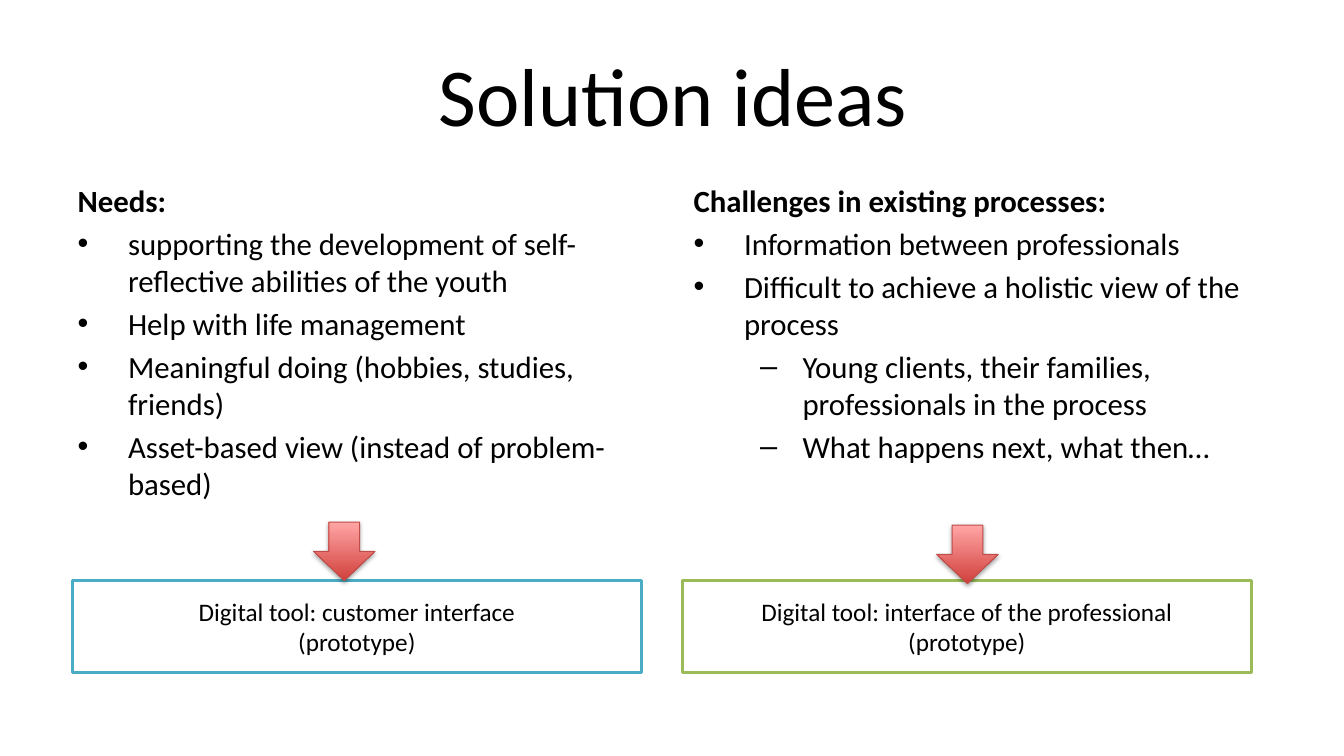
from dataclasses import dataclass

from lxml import etree
from pptx import Presentation
from pptx.dml.color import RGBColor
from pptx.enum.shapes import MSO_SHAPE
from pptx.enum.text import MSO_ANCHOR, MSO_AUTO_SIZE, PP_ALIGN
from pptx.oxml.ns import qn
from pptx.util import Inches, Pt

RECTANGLE, DOWN_ARROW = MSO_SHAPE.RECTANGLE, MSO_SHAPE.DOWN_ARROW
MIDDLE, TOP = MSO_ANCHOR.MIDDLE, MSO_ANCHOR.TOP
CENTER = PP_ALIGN.CENTER
NO_AUTOFIT = MSO_AUTO_SIZE.NONE
TWO_CONTENT_LAYOUT = 3


@dataclass(frozen=True)
class Theme:
    font: str = "Calibri"
    title_size: float = 58.7
    body_size: float = 22
    tool_size: float = 18
    text: str = "000000"
    background: str = "FFFFFF"
    customer: str = "4BACC6"
    professional: str = "9BBB59"
    arrow_dark: str = "D1403C"
    arrow_light: str = "FFA6A5"
    arrow_line: str = "BF4C48"
    shadow: str = "000000"


THEME = Theme()

# Left margin and first-line indent of each list level, in inches
LEVEL_INDENTS = [(0.5, -0.5), (1.08, -0.42)]

NEEDS = [
    (0, "supporting the development of self-reflective abilities of the youth"),
    (0, "Help with life management"),
    (0, "Meaningful doing (hobbies, studies, friends)"),
    (0, "Asset-based view (instead of problem-based)"),
]
CHALLENGES = [
    (0, "Information between professionals"),
    (0, "Difficult to achieve a holistic view of the process"),
    (1, "Young clients, their families, professionals in the process"),
    (1, "What happens next, what then…"),
]


def rgb(value):
    return RGBColor.from_string(value)


def place(shape, left, top, width, height):
    shape.left, shape.top = Inches(left), Inches(top)
    shape.width, shape.height = Inches(width), Inches(height)


def set_font(paragraph, size, bold=False):
    font = paragraph.font
    font.name, font.size, font.bold = THEME.font, Pt(size), bold
    font.color.rgb = rgb(THEME.text)


def set_indent(paragraph, margin, indent):
    properties = paragraph._p.get_or_add_pPr()
    properties.set("marL", str(Inches(margin)))
    properties.set("indent", str(Inches(indent)))
    return properties


def fill_title(title, text):
    place(title, 0.67, 0.3, 12, 1.25)
    frame = title.text_frame
    frame.text = text
    frame.auto_size, frame.vertical_anchor = NO_AUTOFIT, MIDDLE
    paragraph = frame.paragraphs[0]
    paragraph.alignment = CENTER
    set_font(paragraph, THEME.title_size)


def fill_column(body, left, heading, items):
    place(body, left, 1.75, 5.89, 4.95)
    frame = body.text_frame
    frame.auto_size, frame.vertical_anchor = NO_AUTOFIT, TOP
    frame.text = heading
    first = frame.paragraphs[0]
    first.space_before = Pt(0)
    etree.SubElement(set_indent(first, 0, 0), qn("a:buNone"))
    set_font(first, THEME.body_size, bold=True)
    for level, text in items:
        paragraph = frame.add_paragraph()
        paragraph.text, paragraph.level = text, level
        paragraph.space_before = Pt(0.2 * THEME.body_size)
        set_indent(paragraph, *LEVEL_INDENTS[level])
        set_font(paragraph, THEME.body_size)


def add_tool_box(slide, left, lines, outline):
    box = slide.shapes.add_shape(
        RECTANGLE, Inches(left), Inches(5.76), Inches(5.64), Inches(0.91))
    box.shadow.inherit = False
    box.fill.solid()
    box.fill.fore_color.rgb = rgb(THEME.background)
    box.line.color.rgb = rgb(outline)
    box.line.width = Pt(2)
    frame = box.text_frame
    frame.word_wrap, frame.vertical_anchor = True, MIDDLE
    frame.text = "\n".join(lines)
    for paragraph in frame.paragraphs:
        paragraph.alignment = CENTER
        set_font(paragraph, THEME.tool_size)


def add_drop_shadow(shape):
    shape.shadow.inherit = False
    effects = shape._element.spPr.find(qn("a:effectLst"))
    shadow = etree.SubElement(
        effects, qn("a:outerShdw"), blurRad=str(Pt(3.1)), dist=str(Pt(1.8)),
        dir="5400000", rotWithShape="0")
    color = etree.SubElement(shadow, qn("a:srgbClr"), val=THEME.shadow)
    etree.SubElement(color, qn("a:alpha"), val="35000")


def add_arrow(slide, left, top):
    arrow = slide.shapes.add_shape(
        DOWN_ARROW, Inches(left), Inches(top), Inches(0.61), Inches(0.58))
    arrow.fill.gradient()
    arrow.fill.gradient_angle = 90
    stops = arrow.fill.gradient_stops
    for stop, color in zip(stops, (THEME.arrow_dark, THEME.arrow_light)):
        stop.color.rgb = rgb(color)
    arrow.line.color.rgb = rgb(THEME.arrow_line)
    arrow.line.width = Pt(0.75)
    add_drop_shadow(arrow)


def main():
    deck = Presentation()
    deck.slide_width, deck.slide_height = Inches(13.33), Inches(7.5)
    slide = deck.slides.add_slide(deck.slide_layouts[TWO_CONTENT_LAYOUT])
    title, needs, challenges = slide.placeholders

    fill_title(title, "Solution ideas")
    fill_column(needs, 0.67, "Needs:", NEEDS)
    fill_column(challenges, 6.78, "Challenges in existing processes:", CHALLENGES)
    add_tool_box(slide, 0.72, ["Digital tool: customer interface", "(prototype)"],
                 THEME.customer)
    add_tool_box(slide, 6.77,
                 ["Digital tool: interface of the professional", "(prototype)"],
                 THEME.professional)
    add_arrow(slide, 3.11, 5.18)
    add_arrow(slide, 9.29, 5.21)
    deck.save("out.pptx")


if __name__ == "__main__":
    main()
